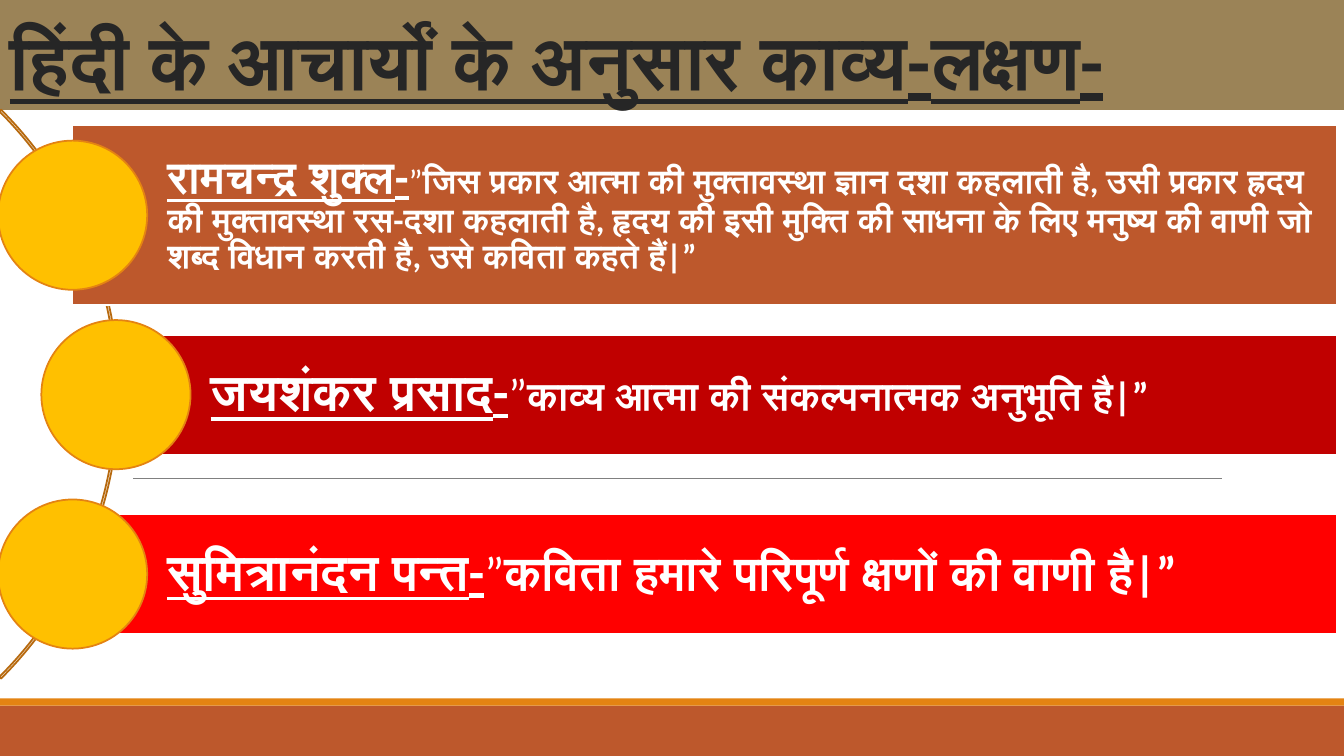
from dataclasses import dataclass
from pptx import Presentation
from pptx.dml.color import RGBColor as RGB
from pptx.enum.shapes import MSO_SHAPE as Kind, MSO_CONNECTOR as Link
from pptx.enum.text import MSO_ANCHOR as Anchor, PP_ALIGN as Align
from pptx.oxml.ns import qn
from pptx.util import Inches, Pt
from lxml import etree


@dataclass(frozen=True)
class Theme:
    font: str = "Calibri"
    ink: str = "262626"
    white: str = "FFFFFF"
    head: str = "9B8357"
    rust: str = "BD582C"
    orange: str = "E48312"
    arc: str = "B7690E"
    gold: str = "FFC000"
    crimson: str = "C00000"
    red: str = "FF0000"
    rule: str = "808080"
    title: int = 54
    edge: float = 1.25


theme = Theme()
deck = Presentation()
deck.slide_width, deck.slide_height = Inches(13.33), Inches(7.5)
slide = deck.slides.add_slide(deck.slide_layouts[6])


def draw(kind, box, fill=None, line=None):
    shape = slide.shapes.add_shape(kind, *map(Inches, box))
    shape.shadow.inherit = False
    if fill:
        shape.fill.solid()
        shape.fill.fore_color.rgb = RGB.from_string(fill)
    else:
        shape.fill.background()
    if line:
        shape.line.color.rgb = RGB.from_string(line)
        shape.line.width = Pt(theme.edge)
    else:
        shape.line.fill.background()
    return shape


def write(shape, runs, color, space, anchor):
    frame = shape.text_frame
    frame.word_wrap = True
    frame.vertical_anchor = anchor
    para = frame.paragraphs[0]
    para.alignment = Align.LEFT
    para.line_spacing = space
    para.font.name = theme.font
    para.font.color.rgb = RGB.from_string(color)
    for text, size, bold, under in runs:
        run = para.add_run()
        run.text = text
        run.font.size = Pt(size)
        run.font.bold = bold
        run.font.underline = under
    return para


# Footer bands and rule
draw(Kind.RECTANGLE, (0, 7, 13.33, 0.5), theme.rust)
draw(Kind.RECTANGLE, (0, 6.93, 13.33, 0.07), theme.orange)
rule = slide.shapes.add_connector(
    Link.STRAIGHT, Inches(1.32), Inches(4.75), Inches(12.12), Inches(4.75))
rule.line.color.rgb = RGB.from_string(theme.rule)
rule.line.width = Pt(0.5)
etree.SubElement(rule._element.spPr, qn("a:effectLst"))

# Title band
band = draw(Kind.RECTANGLE, (0, 0, 13.33, 1.09), theme.head)
title = write(band, [("हिंदी के आचार्यों के अनुसार काव्य-लक्षण-", theme.title, True, True)],
              theme.ink, 0.85, Anchor.BOTTOM)
title.runs[0].font._element.set("spc", "-50")

# Arc joining the circles
arc = draw(Kind.BLOCK_ARC, (-6.8, -0.08, 7.98, 7.98), None, theme.arc)
for i, value in enumerate((189, 27, 0.003)):
    arc.adjustments[i] = value

# Quotation bars: left, height, fill, name, name size, mark size, quote, quote size
bars = [
    (0.72, 1.78, theme.rust, "रामचन्द्र शुक्ल-", 32, 24,
     "जिस प्रकार आत्मा की मुक्तावस्था ज्ञान दशा कहलाती है, उसी प्रकार ह्रदय "
     "की मुक्तावस्था रस-दशा कहलाती है, हृदय की इसी मुक्ति की साधना के लिए "
     "मनुष्य की वाणी जो शब्द विधान करती है, उसे कविता कहते हैं|”", 24),
    (1.15, 1.19, theme.crimson, "जयशंकर प्रसाद-", 36, 32,
     "काव्य आत्मा की संकल्पनात्मक अनुभूति है|”", 28),
    (0.72, 1.19, theme.red, "सुमित्रानंदन पन्त-", 36, 34,
     "कविता हमारे परिपूर्ण क्षणों की वाणी है|”", 34),
]
right, first, step, dot = 13.26, 2.135, 1.78, 1.48
for i, (left, high, fill, name, big, mark, quote, size) in enumerate(bars):
    mid = first + i * step
    bar = draw(Kind.RECTANGLE, (left, mid - high / 2, right - left, high),
               fill, theme.white)
    bar.text_frame.margin_left = Inches(0.94)
    bar.text_frame.margin_right = Inches(0.1)
    write(bar, [(name, big, True, True), ("”", mark, False, False),
                (quote, size, True, False)], theme.white, 0.9, Anchor.MIDDLE)
    draw(Kind.OVAL, (left - dot / 2, mid - dot / 2, dot, dot),
         theme.gold, theme.orange)

deck.save("out.pptx")
